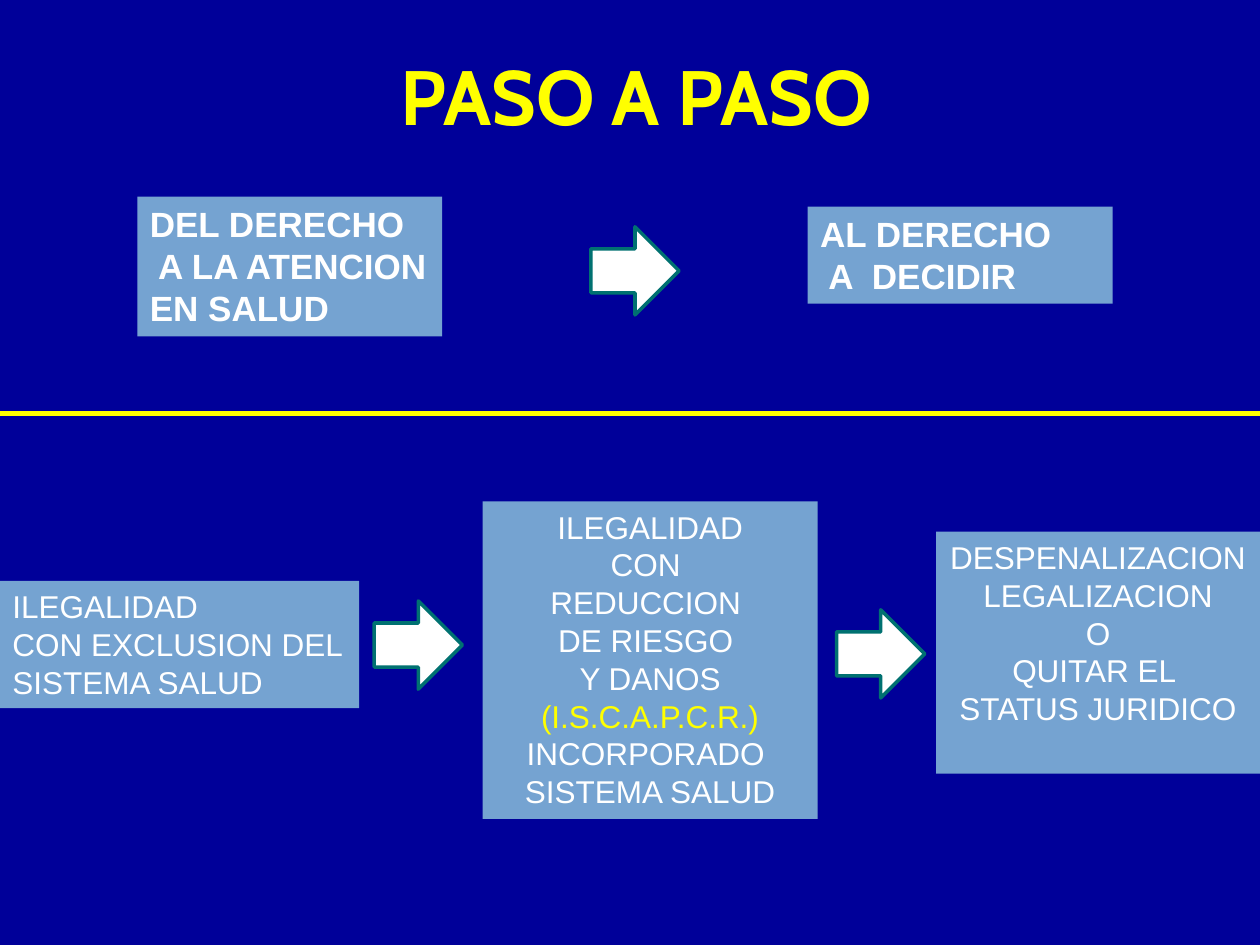
from lxml import etree
from pptx import Presentation
from pptx.dml.color import RGBColor
from pptx.enum import shapes, text
from pptx.oxml import ns
from pptx.util import Inches, Pt

COLORS = {
    "background": "000099",
    "box": "75A3D1",
    "white": "FFFFFF",
    "yellow": "FFFF00",
    "outline": "007171",
}
LEFT, CENTER = text.PP_ALIGN.LEFT, text.PP_ALIGN.CENTER
ARROW_SIZE = 0.7
HIGHLIGHT = "(I.S.C.A.P.C.R.)"

# left, top, width, height, size, bold, alignment, lines
BOXES = [
    (1.09, 1.56, 2.42, 1.11, 20, True, LEFT,
     ["DEL DERECHO", " A LA ATENCION", "EN SALUD"]),
    (6.41, 1.64, 2.42, 0.77, 20, True, LEFT,
     ["AL DERECHO", " A  DECIDIR"]),
    (0, 4.61, 2.85, 1.01, 18, False, LEFT,
     ["ILEGALIDAD", "CON EXCLUSION DEL", "SISTEMA SALUD"]),
    (3.83, 3.98, 2.66, 2.52, 18, False, CENTER,
     ["ILEGALIDAD", "CON ", "REDUCCION ", "DE RIESGO ", "Y DANOS",
      HIGHLIGHT, "INCORPORADO ", "SISTEMA SALUD"]),
    (7.43, 4.22, 2.57, 1.92, 18, False, CENTER,
     ["DESPENALIZACION", "LEGALIZACION", "O", "QUITAR EL ",
      "STATUS JURIDICO"]),
]
ARROWS = [(4.69, 1.8), (2.97, 4.77), (6.64, 4.84)]


def color(name):
    return RGBColor.from_string(COLORS[name])


def write_lines(shape, lines, font_name, size, bold, alignment, anchor, font_color):
    frame = shape.text_frame
    frame.word_wrap = True
    frame.vertical_anchor = anchor
    frame.text = "\n".join(lines)
    for paragraph in frame.paragraphs:
        paragraph.alignment = alignment
        font = paragraph.font
        font.name, font.size, font.bold = font_name, Pt(size), bold
        name = "yellow" if paragraph.text == HIGHLIGHT else font_color
        font.color.rgb = color(name)


def add_filled_shape(slide, kind, left, top, width, height, fill):
    shape = slide.shapes.add_shape(
        kind, Inches(left), Inches(top), Inches(width), Inches(height))
    shape.shadow.inherit = False
    shape.fill.solid()
    shape.fill.fore_color.rgb = color(fill)
    return shape


def add_title(slide):
    title = slide.shapes.add_textbox(
        Inches(0.55), Inches(0), Inches(9), Inches(1.5))
    write_lines(title, ["PASO A PASO"], "Cabin", 44, True, CENTER,
                text.MSO_ANCHOR.MIDDLE, "yellow")


def add_box(slide, left, top, width, height, size, bold, alignment, lines):
    box = add_filled_shape(slide, shapes.MSO_SHAPE.RECTANGLE,
                           left, top, width, height, "box")
    box.line.fill.background()
    write_lines(box, lines, "Arial", size, bold, alignment,
                text.MSO_ANCHOR.TOP, "white")


def add_arrow(slide, left, top):
    arrow = add_filled_shape(slide, shapes.MSO_SHAPE.RIGHT_ARROW,
                             left, top, ARROW_SIZE, ARROW_SIZE, "white")
    arrow.line.color.rgb = color("outline")
    arrow.line.width = Pt(2)


def add_divider(slide, top):
    divider = slide.shapes.add_connector(
        shapes.MSO_CONNECTOR.STRAIGHT,
        Inches(0), Inches(top), Inches(10), Inches(top))
    divider.line.color.rgb = color("yellow")
    divider.line.width = Pt(2.75)
    etree.SubElement(divider._element.spPr, ns.qn("a:effectLst"))


def main():
    presentation = Presentation()
    presentation.slide_width = Inches(10)
    presentation.slide_height = Inches(7.5)
    slide = presentation.slides.add_slide(presentation.slide_layouts[6])
    slide.background.fill.solid()
    slide.background.fill.fore_color.rgb = color("background")

    add_title(slide)
    for box in BOXES:
        add_box(slide, *box)
    for left, top in ARROWS:
        add_arrow(slide, left, top)
    add_divider(slide, 3.28)

    presentation.save("out.pptx")


if __name__ == "__main__":
    main()
